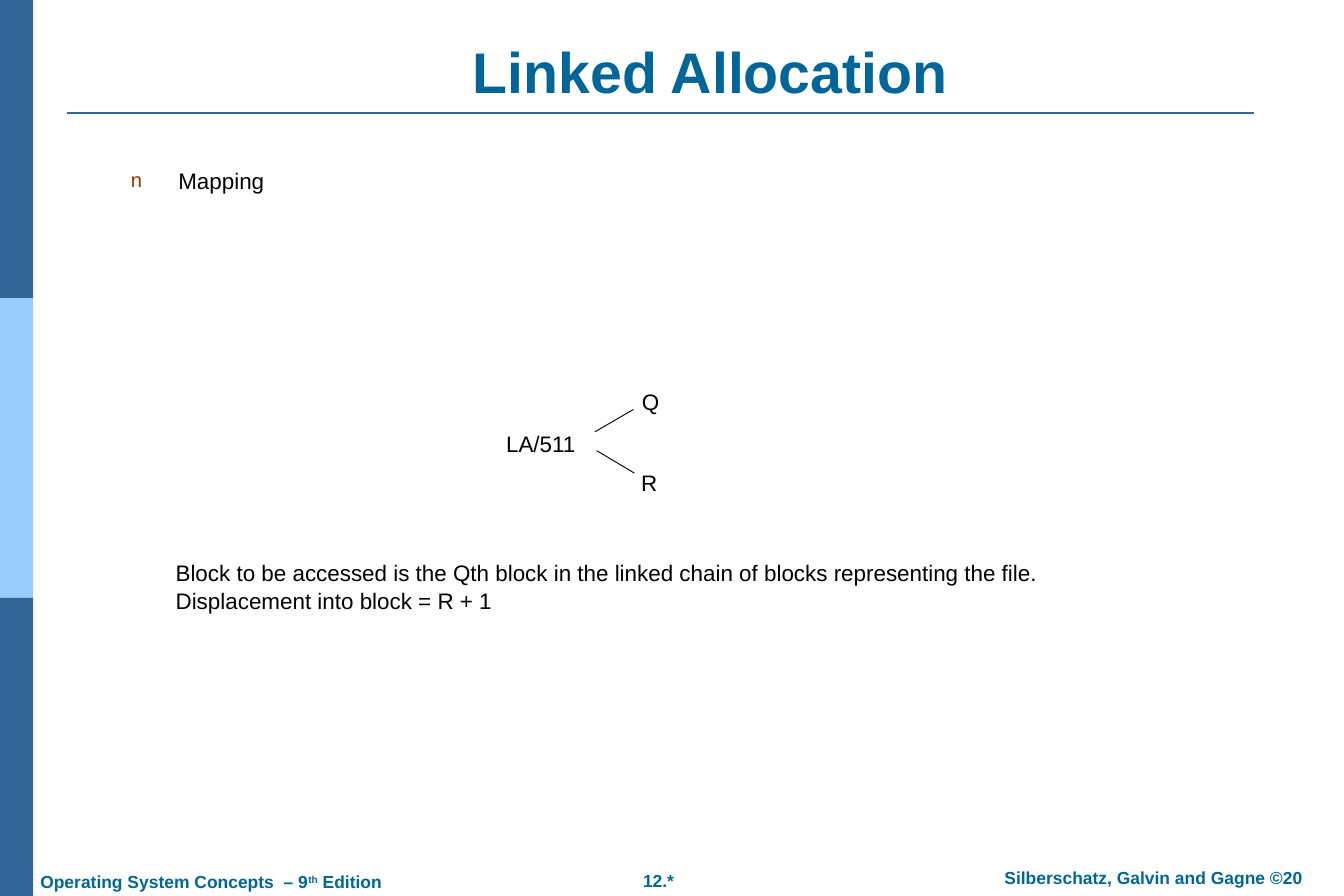
import lxml.etree
import pptx
import pptx.dml.color
import pptx.enum.shapes
import pptx.enum.text
import pptx.oxml.ns
import pptx.util

PX = 9144
FONT = "Arial"
NAVY = pptx.dml.color.RGBColor(0x33, 0x66, 0x99)
SKY = pptx.dml.color.RGBColor(0x99, 0xCC, 0xFF)
TEAL = pptx.dml.color.RGBColor(0x00, 0x66, 0x99)
RUST = pptx.dml.color.RGBColor(0x99, 0x33, 0x00)
BLACK = pptx.dml.color.RGBColor(0x00, 0x00, 0x00)
LEFT = pptx.enum.text.PP_ALIGN.LEFT
CENTER = pptx.enum.text.PP_ALIGN.CENTER
TOP = pptx.enum.text.MSO_ANCHOR.TOP
MIDDLE = pptx.enum.text.MSO_ANCHOR.MIDDLE
BOTTOM = pptx.enum.text.MSO_ANCHOR.BOTTOM


def px(count):
    return pptx.util.Emu(count * PX)


def add_node(parent, tag, **attrs):
    return lxml.etree.SubElement(parent, pptx.oxml.ns.qn(tag), **attrs)


def add_bar(slide, top, height, color):
    kind = pptx.enum.shapes.MSO_SHAPE.RECTANGLE
    bar = slide.shapes.add_shape(kind, px(0), px(top), px(37), px(height))
    bar.shadow.inherit = False
    bar.fill.solid()
    bar.fill.fore_color.rgb = color
    bar.line.fill.background()


def add_line(slide, start, end, color, width):
    kind = pptx.enum.shapes.MSO_CONNECTOR.STRAIGHT
    line = slide.shapes.add_connector(kind, *map(px, start + end))
    line.line.color.rgb = color
    line.line.width = pptx.util.Pt(width)
    add_node(line._element.spPr, "a:effectLst")


def add_box(slide, area, anchor=TOP, wrap=True):
    frame = slide.shapes.add_textbox(*map(px, area)).text_frame
    frame.word_wrap = wrap
    frame.vertical_anchor = anchor
    frame.margin_left = frame.margin_right = px(14)
    frame.margin_top = frame.margin_bottom = px(7)
    return frame


def set_indent(para, margin, indent):
    props = para._p.get_or_add_pPr()
    props.set("marL", str(px(margin)))
    props.set("indent", str(px(indent)))
    return props


def add_bullet(para, mark, color):
    props = set_indent(para, 53, -53)
    add_node(add_node(props, "a:buClr"), "a:srgbClr", val=str(color))
    add_node(props, "a:buSzPct", val="90000")
    add_node(props, "a:buFont", typeface=FONT)
    add_node(props, "a:buChar", char=mark)


def add_run(para, text, size, color, bold=False, raised=False):
    run = para.add_run()
    run.text = text
    run.font.name = FONT
    run.font.size = pptx.util.Pt(size)
    run.font.bold = bold
    run.font.color.rgb = color
    if raised:
        run._r.get_or_add_rPr().set("baseline", "30000")


def add_foot(slide, area, parts, align=CENTER):
    para = add_box(slide, area).paragraphs[0]
    para.alignment = align
    for text, raised in parts:
        add_run(para, text, 14, TEAL, True, raised)


def add_label(slide, area, text):
    para = add_box(slide, area, MIDDLE, False).paragraphs[0]
    para.alignment = CENTER
    add_run(para, text, 18, BLACK)


def add_title(slide, area, text):
    para = add_box(slide, area, BOTTOM).paragraphs[0]
    para.alignment = CENTER
    add_run(para, text, 46, TEAL, True)


def add_point(slide, area, text):
    para = add_box(slide, area).paragraphs[0]
    add_bullet(para, "n", RUST)
    add_run(para, text, 18, BLACK)


def add_notes(slide, area, lines):
    frame = add_box(slide, area)
    for i, text in enumerate(lines):
        para = frame.add_paragraph() if i else frame.paragraphs[0]
        set_indent(para, 71, -1)
        if i:
            para.space_before = pptx.util.Pt(1)
        add_run(para, text, 18, BLACK)


def main():
    deck = pptx.Presentation()
    deck.slide_width, deck.slide_height = px(1500), px(1000)
    slide = deck.slides.add_slide(deck.slide_layouts[6])

    for top, height, color in ((0, 333, NAVY), (333, 334, SKY), (667, 333, NAVY)):
        add_bar(slide, top, height, color)
    add_line(slide, (75, 126), (1400, 126), NAVY, 1.5)

    add_foot(slide, (695, 964, 80, 38), [("12.*", False)])
    add_foot(slide, (1065, 961, 445, 38),
             [("Silberschatz, Galvin and Gagne ©20", False)])
    add_foot(slide, (31, 965, 413, 38),
             [("Operating System Concepts  – 9", False), ("th", True),
              (" Edition", False)], LEFT)

    add_title(slide, (160, 40, 1265, 84), "Linked Allocation")
    add_point(slide, (132, 180, 1209, 221), "Mapping")
    add_notes(slide, (112, 617, 1286, 238), [
        "Block to be accessed is the Qth block in the linked chain of blocks "
        "representing the file.",
        "Displacement into block = R + 1",
    ])

    add_label(slide, (550, 472, 107, 45), "LA/511")
    add_label(slide, (702, 426, 48, 45), "Q")
    add_label(slide, (701, 516, 47, 45), "R")
    add_line(slide, (664, 482), (707, 457), BLACK, 0.75)
    add_line(slide, (666, 503), (708, 528), BLACK, 0.75)

    deck.save("out.pptx")


if __name__ == "__main__":
    main()
